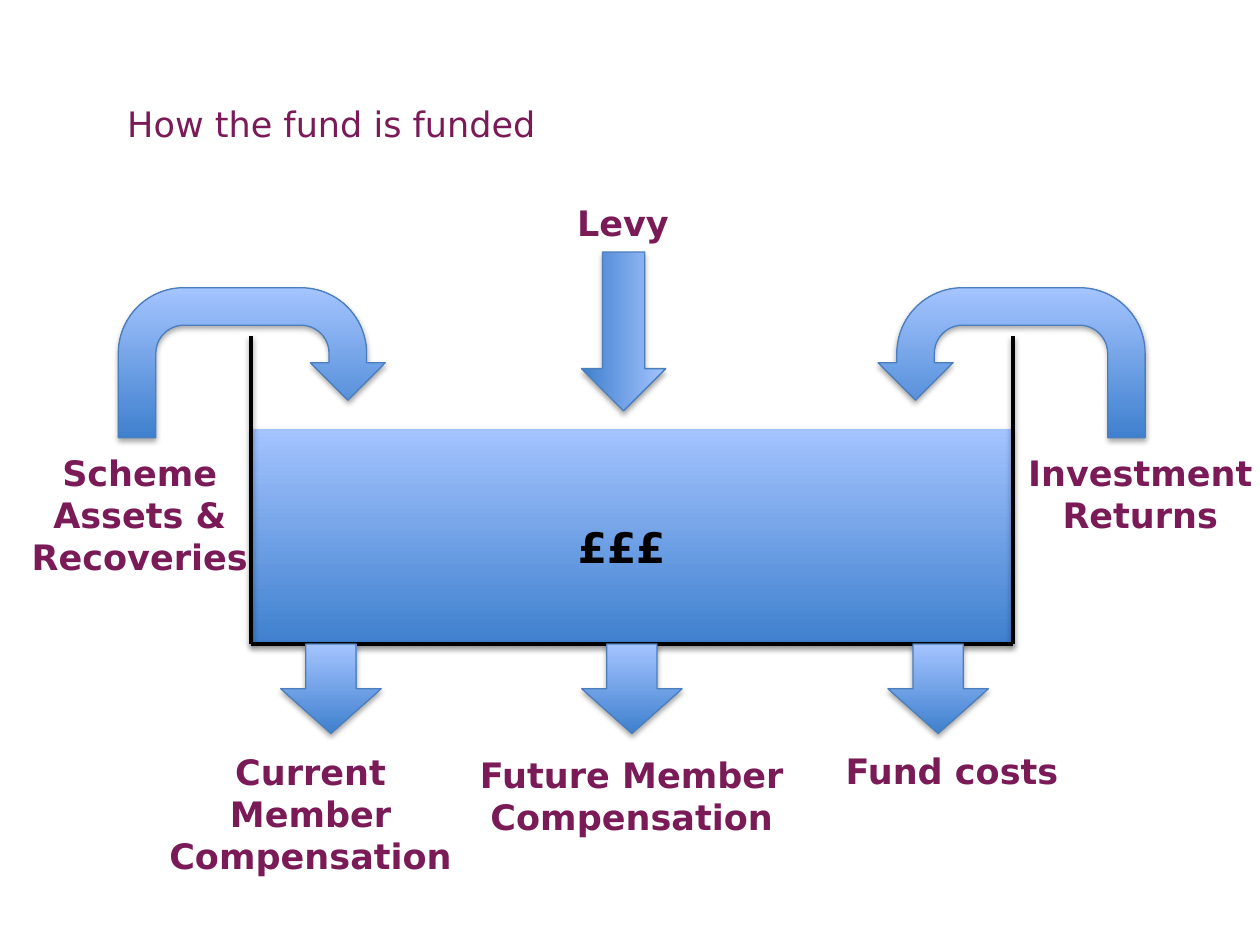
from lxml.etree import SubElement
from pptx import Presentation
from pptx.dml.color import RGBColor
from pptx.enum.shapes import MSO_CONNECTOR, MSO_SHAPE as SHAPE
from pptx.enum.text import MSO_ANCHOR, MSO_AUTO_SIZE, PP_ALIGN
from pptx.oxml.ns import qn
from pptx.util import Pt

FONT = "DejaVu Sans"
PLUM, BLACK = "7A1A57", "000000"
DEEP_BLUE, PALE_BLUE, EDGE_BLUE = "3F80CE", "A4C4FF", "4B7EBC"


def rgb(value):
    """Turn a hex string into a colour."""
    return RGBColor.from_string(value)


def add_shadow(shape, alpha, distance):
    """Give a shape or line a soft shadow straight below it."""
    effects = SubElement(shape._element.spPr, qn("a:effectLst"))
    outer = SubElement(effects, qn("a:outerShdw"), blurRad=str(Pt(3.15)),
                       dist=str(Pt(distance)), dir="5400000", rotWithShape="0")
    colour = SubElement(outer, qn("a:srgbClr"), val=BLACK)
    SubElement(colour, qn("a:alpha"), val=str(alpha * 1000))


def add_blue_shape(slide, kind, box, edge=EDGE_BLUE, rotation=0, flip=False):
    """Add a preset shape with the blue gradient and shadow."""
    sp = slide.shapes.add_shape(kind, *map(Pt, box))
    sp.rotation = rotation
    if flip:
        sp._element.spPr.xfrm.set("flipH", "1")
    sp.fill.gradient()
    sp.fill.gradient_angle = 90
    for stop, colour in zip(sp.fill.gradient_stops, (DEEP_BLUE, PALE_BLUE)):
        stop.color.rgb = rgb(colour)
    if edge:
        sp.line.color.rgb = rgb(edge)
        sp.line.width = Pt(0.75)
    else:
        sp.line.fill.background()
    add_shadow(sp, 35, 1.8)


def add_run(p, text, size, colour, bold):
    """Add one formatted run to a paragraph."""
    r = p.add_run()
    r.text = text
    r.font.name, r.font.size, r.font.bold = FONT, Pt(size), bold
    r.font.color.rgb = rgb(colour)


def add_label(slide, text, box, size=20, colour=PLUM):
    """Add a bold centred label."""
    tf = slide.shapes.add_textbox(*map(Pt, box)).text_frame
    tf.word_wrap = True
    tf.auto_size = MSO_AUTO_SIZE.SHAPE_TO_FIT_TEXT
    p = tf.paragraphs[0]
    p.alignment = PP_ALIGN.CENTER
    add_run(p, text, size, colour, True)


def add_title(slide, text, box):
    """Place and format the title placeholder."""
    title = slide.shapes.title
    title.left, title.top, title.width, title.height = map(Pt, box)
    tf = title.text_frame
    tf.vertical_anchor = MSO_ANCHOR.TOP
    p = tf.paragraphs[0]
    p.alignment = PP_ALIGN.LEFT
    add_run(p, text, 20, PLUM, False)


def add_tank(slide, box, depth):
    """Draw an open tank filled to the given depth."""
    left, top, width, height = box
    right, bottom = left + width, top + height
    add_blue_shape(slide, SHAPE.RECTANGLE,
                   (left + 0.7, bottom - depth, width - 1.4, depth), edge=None)
    walls = [((left, top, left, bottom), 2.25),
             ((right, top, right, bottom), 2.25),
             ((left, bottom, right, bottom), 2)]
    for ends, weight in walls:
        wall = slide.shapes.add_connector(MSO_CONNECTOR.STRAIGHT, *map(Pt, ends))
        wall.line.color.rgb = rgb(BLACK)
        wall.line.width = Pt(weight)
        add_shadow(wall, 38, 1.6)
    add_label(slide, "£££", (276.5, bottom - 73.4, 157.5, 36.4), 24, BLACK)


def add_inflows(slide, box):
    """Draw the two bent arrows and the levy arrow with their labels."""
    left, top, width, height = box
    arrow_width = 152.6
    for x, flip in ((left, False), (left + width - arrow_width, True)):
        add_blue_shape(slide, SHAPE.U_TURN_ARROW,
                       (x, top, arrow_width, height), flip=flip)
    add_blue_shape(slide, SHAPE.RIGHT_ARROW, (311, 165.3, 90.7, 48.2), rotation=90)
    add_label(slide, "Levy", (317.5, 111.6, 77, 31.5))
    label_top = top + height + 4.3
    add_label(slide, "Scheme Assets & Recoveries", (9.4, label_top, 141, 80))
    add_label(slide, "Investment Returns", (578.2, label_top, 146.9, 55.7))


def add_outflow(slide, text, box, label_left, label_top):
    """Draw one arrow out of the tank and its label."""
    add_blue_shape(slide, SHAPE.DOWN_ARROW, box)
    add_label(slide, text, (label_left, label_top, 198, 55.7))


def main():
    """Build the funding slide."""
    prs = Presentation()
    prs.slide_width, prs.slide_height = Pt(720), Pt(540)
    slide = prs.slides.add_slide(prs.slide_layouts[5])
    add_title(slide, "How the fund is funded", (65.5, 54.7, 548, 52.6))
    add_tank(slide, (143.3, 192.2, 435.6, 175.8), 123)
    add_inflows(slide, (67.6, 164.4, 586.8, 85.7))
    outflows = [("Current Member Compensation", 160.4, 78.5, 425.5),
                ("Future Member Compensation", 332.4, 262, 427),
                ("Fund costs", 507.4, 445, 424.8)]
    for text, arrow_left, label_left, label_top in outflows:
        add_outflow(slide, text, (arrow_left, 368, 57.4, 51.2), label_left, label_top)
    prs.save("out.pptx")


if __name__ == "__main__":
    main()
